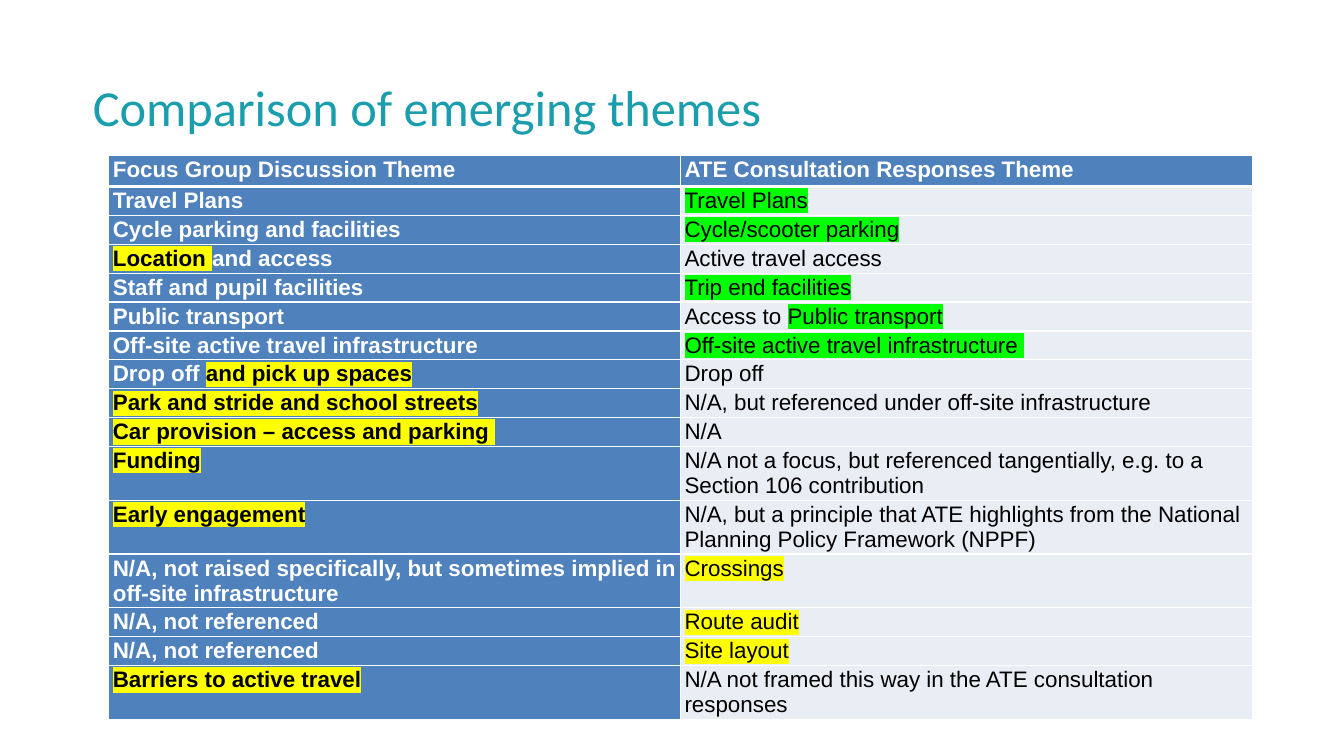
import dataclasses

import lxml.etree
import pptx
import pptx.dml.color
import pptx.enum.text
import pptx.oxml.ns
import pptx.util

EMU_PER_PX = 9144  # 100 px to the inch
WHITE, BLACK, TEAL = "FFFFFF", "000000", "1A9DAC"
BLUE, PALE = "4F81BD", "E9EDF4"
YELLOW, GREEN = "FFFF00", "00FF00"


@dataclasses.dataclass(frozen=True)
class Run:
    text: str
    mark: str = ""


@dataclasses.dataclass(frozen=True)
class Theme:
    focus_group: list[Run]
    consultation: list[Run]
    height: int = 28


def yellow(text: str) -> Run:
    return Run(text, YELLOW)


def green(text: str) -> Run:
    return Run(text, GREEN)


THEMES = [
    Theme([Run("Focus Group Discussion Theme")], [Run("ATE Consultation Responses Theme")], 31),
    Theme([Run("Travel Plans")], [green("Travel Plans")]),
    Theme([Run("Cycle parking and facilities")], [green("Cycle/scooter parking")]),
    Theme([yellow("Location "), Run("and access")], [Run("Active travel access")]),
    Theme([Run("Staff and pupil facilities")], [green("Trip end facilities")]),
    Theme([Run("Public transport")], [Run("Access to "), green("Public transport")]),
    Theme([Run("Off-site active travel infrastructure")],
          [green("Off-site active travel infrastructure ")]),
    Theme([Run("Drop off "), yellow("and pick up spaces")], [Run("Drop off")]),
    Theme([yellow("Park and stride and school streets")],
          [Run("N/A, but referenced under off-site infrastructure")]),
    Theme([yellow("Car provision – access and parking ")], [Run("N/A")]),
    Theme([yellow("Funding")],
          [Run("N/A not a focus, but referenced tangentially, e.g. to a "
               "Section 106 contribution")], 50),
    Theme([yellow("Early engagement")],
          [Run("N/A, but a principle that ATE highlights from the National "
               "Planning Policy Framework (NPPF)")], 50),
    Theme([Run("N/A, not raised specifically, but sometimes implied in "
               "off-site infrastructure")], [yellow("Crossings")], 50),
    Theme([Run("N/A, not referenced")], [yellow("Route audit")]),
    Theme([Run("N/A, not referenced")], [yellow("Site layout")]),
    Theme([yellow("Barriers to active travel")],
          [Run("N/A not framed this way in the ATE consultation responses")]),
]


def px(length: int) -> int:
    return pptx.util.Emu(length * EMU_PER_PX)


def rgb(colour: str) -> pptx.dml.color.RGBColor:
    return pptx.dml.color.RGBColor.from_string(colour)


def apply(target, values: dict) -> None:
    for name, value in values.items():
        setattr(target, name, value)


def add_colour(parent, tag: str, colour: str):
    element = lxml.etree.SubElement(parent, pptx.oxml.ns.qn(tag))
    lxml.etree.SubElement(element, pptx.oxml.ns.qn("a:srgbClr"), val=colour)
    return element


def add_run(paragraph, part: Run, colour: str, bold: bool) -> None:
    run = paragraph.add_run()
    run.text = part.text
    apply(run.font, {"size": pptx.util.Pt(16), "bold": bold})
    run.font.color.rgb = rgb(BLACK if part.mark else colour)
    if part.mark:
        add_colour(run.font._element, "a:highlight", part.mark)
    run.font.name = "Arial"


def set_borders(cell, bottom: int, top: int) -> None:
    properties = cell._tc.get_or_add_tcPr()
    for side, width in {"L": 1, "R": 1, "T": top, "B": bottom}.items():
        line = lxml.etree.SubElement(
            properties, pptx.oxml.ns.qn(f"a:ln{side}"), w=str(pptx.util.Pt(width)))
        add_colour(line, "a:solidFill", WHITE)


def fill_cell(cell, parts: list[Run], row: int, column: int) -> None:
    strong = row == 0 or column == 0
    apply(cell, {"margin_left": px(4), "margin_right": px(4),
                 "margin_top": px(2), "margin_bottom": px(2)})
    set_borders(cell, bottom=3 if row == 0 else 1, top=3 if row == 1 else 1)
    cell.fill.solid()
    cell.fill.fore_color.rgb = rgb(BLUE if strong else PALE)
    for part in parts:
        add_run(cell.text_frame.paragraphs[0], part, WHITE if strong else BLACK, strong)


def add_title(slide) -> None:
    title = slide.shapes.title
    apply(title, {"left": px(92), "top": px(76), "width": px(1126), "height": px(87)})
    frame = title.text_frame
    frame.text = "Comparison of emerging themes"
    apply(frame, {"margin_left": 0, "margin_right": 0, "margin_top": 0, "margin_bottom": 0,
                  "word_wrap": True, "auto_size": pptx.enum.text.MSO_AUTO_SIZE.NONE,
                  "vertical_anchor": pptx.enum.text.MSO_ANCHOR.TOP})
    heading = frame.paragraphs[0]
    heading.alignment = pptx.enum.text.PP_ALIGN.LEFT
    font = heading.runs[0].font
    apply(font, {"name": "Calibri", "size": pptx.util.Pt(36), "bold": False})
    font.color.rgb = rgb(TEAL)


def add_themes(slide) -> None:
    height = sum(theme.height for theme in THEMES)
    table = slide.shapes.add_table(
        len(THEMES), 2, px(108), px(154), px(1134), px(height)).table
    for row, theme in enumerate(THEMES):
        table.rows[row].height = px(theme.height)
        for column, parts in enumerate((theme.focus_group, theme.consultation)):
            fill_cell(table.cell(row, column), parts, row, column)


def main() -> None:
    deck = pptx.Presentation()
    apply(deck, {"slide_width": px(1333), "slide_height": px(750)})
    slide = deck.slides.add_slide(deck.slide_layouts.get_by_name("Title Only"))
    # Heading
    add_title(slide)
    # Side-by-side themes
    add_themes(slide)
    deck.save("out.pptx")


if __name__ == "__main__":
    main()
